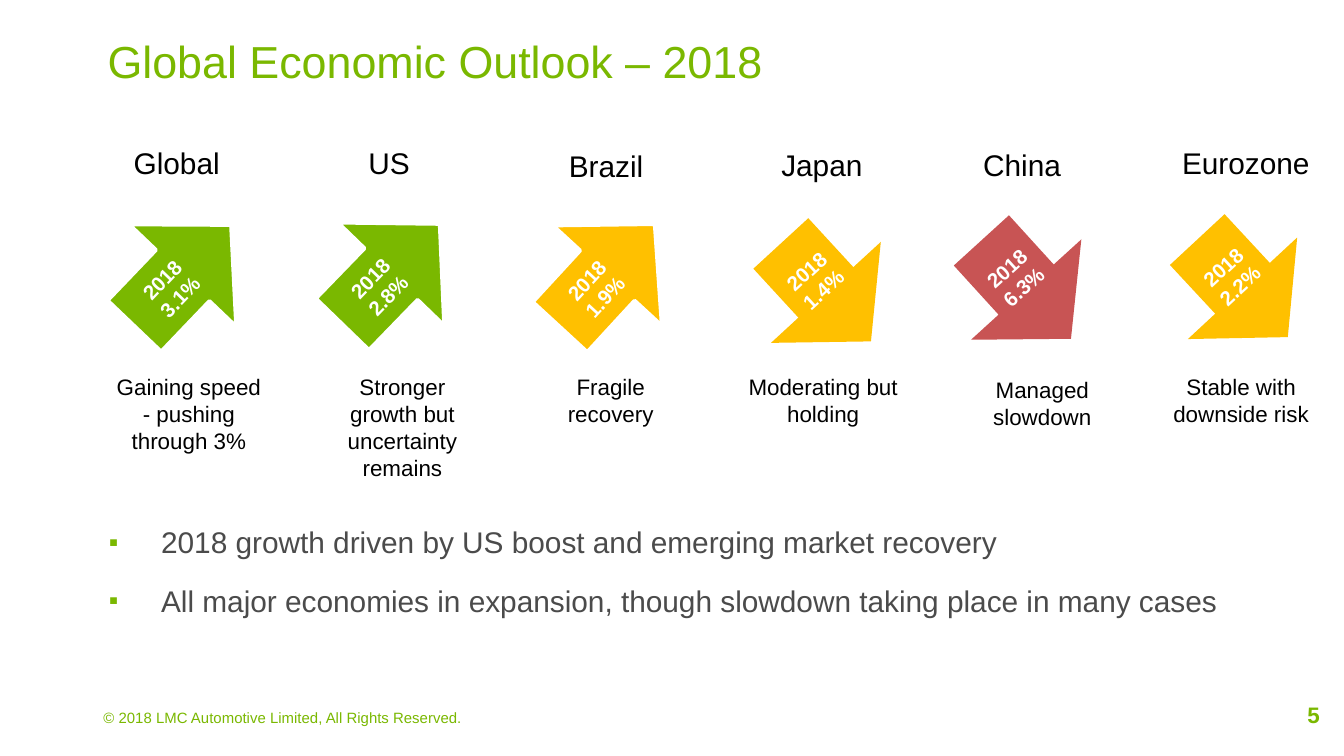
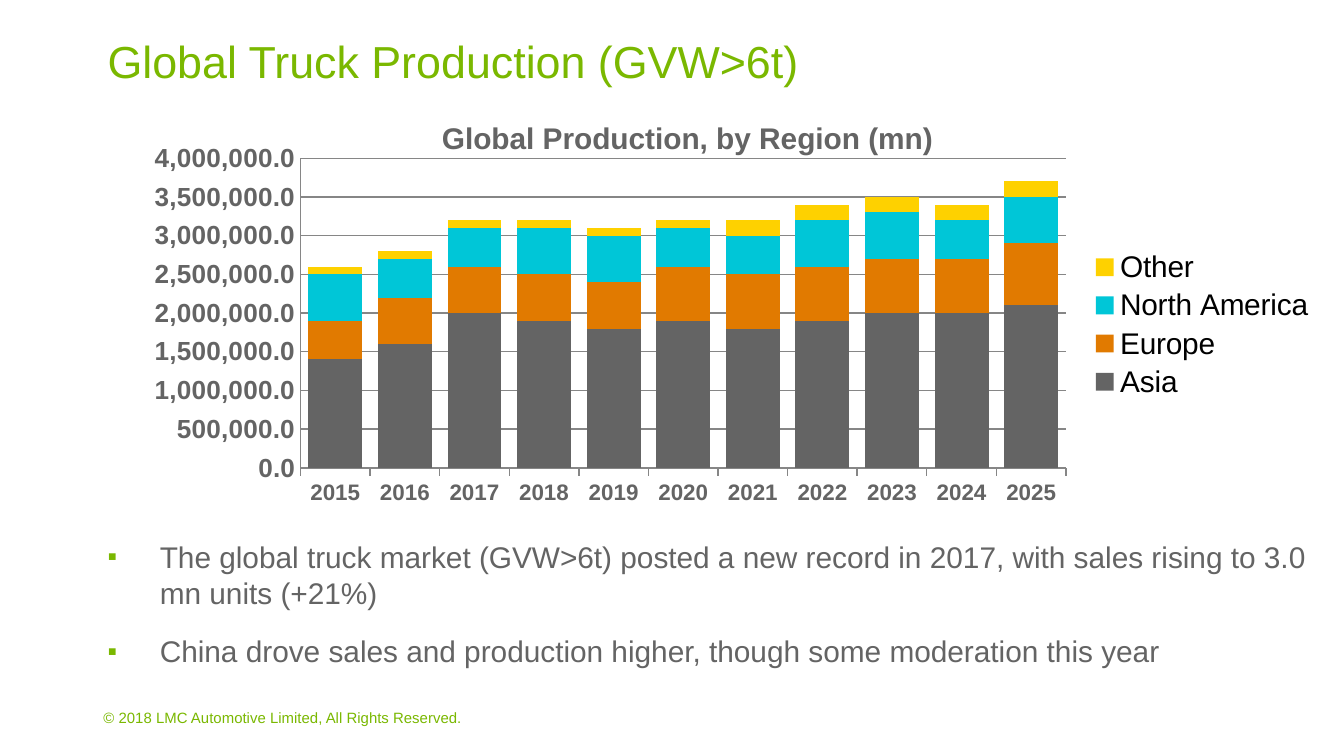
from dataclasses import dataclass
from typing import NamedTuple, Optional

import pptx
import pptx.chart.data
import pptx.dml.color
import pptx.enum.chart
import pptx.enum.shapes
import pptx.enum.text
import pptx.oxml
import pptx.oxml.ns
import pptx.util

Pt = pptx.util.Pt
Align = pptx.enum.text.PP_ALIGN
Anchor = pptx.enum.text.MSO_ANCHOR
AutoSize = pptx.enum.text.MSO_AUTO_SIZE


class Box(NamedTuple):
    left: float
    top: float
    width: float
    height: float

    def lengths(self) -> list:
        return [Pt(value) for value in self]


@dataclass(frozen=True)
class Theme:
    font: str = "Arial"
    green: str = "7AB800"
    amber: str = "FFC000"
    red: str = "C85454"
    white: str = "FFFFFF"
    black: str = "000000"
    grey: str = "646464"
    dark_grey: str = "4B4B4B"
    grid: str = "868686"
    orange: str = "E17A00"
    cyan: str = "00C6D7"
    yellow: str = "FED100"
    title_size: float = 24
    body_size: float = 16
    value_axis_size: float = 14
    small_size: float = 12
    arrow_size: float = 11
    footer_size: float = 8


THEME = Theme()


@dataclass(frozen=True)
class Region:
    name: str
    name_box: Box
    growth: str
    rising: bool
    color: str
    arrow_left: float
    arrow_top: float
    rotation: float
    comment: str
    comment_box: Box


@dataclass(frozen=True)
class Series:
    name: str
    color: str
    hundred_thousands: tuple


REGIONS = (
    Region("Global", Box(64.1, 74.2, 61.2, 26.6), "3.1%", True, THEME.green,
           58.3, 110.2, 43.7, "Gaining speed - pushing through 3%",
           Box(52.6, 196.6, 97.2, 51.1)),
    Region("US", Box(190.1, 74.2, 36.7, 26.6), "2.8%", True, THEME.green,
           169.9, 109.4, 44.1, "Stronger growth but uncertainty remains",
           Box(167, 196.6, 97.2, 65.5)),
    Region("Brazil", Box(297.4, 75.6, 54.7, 26.6), "1.9%", True, THEME.amber,
           285.8, 110.2, 42.6, "Fragile recovery",
           Box(278.6, 196.6, 97.2, 36)),
    Region("Japan", Box(411.1, 74.9, 58.3, 26.6), "1.4%", False, THEME.amber,
           402.5, 121, 317.4, "Moderating but holding",
           Box(392.4, 196.6, 97.2, 36)),
    Region("China", Box(519.1, 74.9, 56.9, 26.6), "6.3%", False, THEME.red,
           509.8, 119.5, 317.7, "Managed slowdown",
           Box(509.8, 198, 97.2, 36)),
    Region("Eurozone", Box(625.7, 74.2, 83.5, 26.6), "2.2%", False, THEME.amber,
           625.7, 118.8, 317.1, "Stable with downside risk",
           Box(616.3, 196.6, 97.2, 36)),
)

YEARS = [str(year) for year in range(2015, 2026)]
PRODUCTION = (
    Series("Asia", THEME.grey, (14, 16, 20, 19, 18, 19, 18, 19, 20, 20, 21)),
    Series("Europe", THEME.orange, (5, 6, 6, 6, 6, 7, 7, 7, 7, 7, 8)),
    Series("North America", THEME.cyan, (6, 5, 5, 6, 6, 5, 5, 6, 6, 5, 6)),
    Series("Other", THEME.yellow, (1, 1, 1, 1, 1, 1, 2, 2, 2, 2, 2)),
)


def rgb(color: str):
    return pptx.dml.color.RGBColor.from_string(color)


def format_font(font, size: float, color: str, bold: bool = False) -> None:
    font.name = THEME.font
    font.size = Pt(size)
    font.bold = bold
    font.color.rgb = rgb(color)


def clear_margins(frame) -> None:
    frame.margin_left = frame.margin_top = frame.margin_right = frame.margin_bottom = 0


def write_lines(frame, lines: tuple, size: float, color: str, bold: bool = False,
                align=Align.LEFT) -> None:
    for index, line in enumerate(lines):
        paragraph = frame.add_paragraph() if index else frame.paragraphs[0]
        paragraph.text = line
        paragraph.alignment = align
        format_font(paragraph.font, size, color, bold)


def add_text(slide, box: Box, text: str, size: float, color: str, bold: bool = False,
             align=Align.LEFT, wrap: bool = True, inset: bool = True,
             anchor=Anchor.TOP) -> None:
    frame = slide.shapes.add_textbox(*box.lengths()).text_frame
    frame.word_wrap = wrap
    frame.vertical_anchor = anchor
    if not inset:
        clear_margins(frame)
    write_lines(frame, (text,), size, color, bold, align)


def add_bullets(slide, box: Box, lines: tuple, color: str) -> None:
    frame = slide.shapes.add_textbox(*box.lengths()).text_frame
    frame.word_wrap = True
    clear_margins(frame)
    for index, line in enumerate(lines):
        paragraph = frame.add_paragraph() if index else frame.paragraphs[0]
        paragraph.text = line
        properties = paragraph._p.get_or_add_pPr()
        properties.set("marL", str(Pt(28)))
        properties.set("indent", str(-Pt(28)))
        namespace = pptx.oxml.ns.nsdecls("a")
        for element in (
            f'<a:buClr {namespace}><a:srgbClr val="{THEME.green}"/></a:buClr>',
            f'<a:buSzPct {namespace} val="90000"/>',
            f'<a:buFont {namespace} typeface="{THEME.font}"/>',
            f'<a:buChar {namespace} char="▪"/>',
        ):
            properties.append(pptx.oxml.parse_xml(element))
        if index:
            paragraph.space_before = Pt(12)
        format_font(paragraph.font, THEME.body_size, color)


def add_slide(presentation, title: str, number: Optional[str] = None):
    """Add a title-only slide with the shared title style and footer."""
    slide = presentation.slides.add_slide(presentation.slide_layouts[5])
    placeholder = slide.shapes.title
    placeholder.left, placeholder.top, placeholder.width, placeholder.height = (
        Box(57.6, 18, 648, 39.6).lengths())
    frame = placeholder.text_frame
    frame.auto_size = AutoSize.NONE
    frame.vertical_anchor = Anchor.TOP
    clear_margins(frame)
    write_lines(frame, (title,), THEME.title_size, THEME.green)
    add_text(slide, Box(55.4, 379.4, 378, 9.4),
             "© 2018 LMC Automotive Limited, All Rights Reserved.",
             THEME.footer_size, THEME.green, inset=False)
    if number:
        add_text(slide, Box(539.3, 372.2, 167.8, 21.6), number, THEME.small_size,
                 THEME.green, True, Align.RIGHT, inset=False, anchor=Anchor.MIDDLE)
    return slide


def add_growth_arrow(slide, region: Region) -> None:
    kinds = pptx.enum.shapes.MSO_SHAPE
    kind = kinds.UP_ARROW if region.rising else kinds.DOWN_ARROW
    width, height = (79.2, 74.9) if region.rising else (79.9, 71.3)
    box = Box(region.arrow_left, region.arrow_top, width, height)
    arrow = slide.shapes.add_shape(kind, *box.lengths())
    arrow.rotation = region.rotation
    arrow.shadow.inherit = False
    arrow.fill.solid()
    arrow.fill.fore_color.rgb = rgb(region.color)
    frame = arrow.text_frame
    frame.word_wrap = True
    frame.vertical_anchor = Anchor.MIDDLE
    if region.rising:
        arrow.line.color.rgb = rgb(THEME.white)
        arrow.line.width = Pt(2)
        frame._txBody.bodyPr.set("vert", "vert270")
    else:
        arrow.line.fill.background()
    write_lines(frame, ("2018", region.growth), THEME.arrow_size, THEME.white, True,
                Align.CENTER)


def place_plot(chart, box: Box) -> None:
    """Fix the inner plot area, in fractions of the chart's size."""
    area = chart._chartSpace.chart.plotArea
    for layout in area.findall(pptx.oxml.ns.qn("c:layout")):
        area.remove(layout)
    values = "".join(f'<c:{key} val="{value}"/>' for key, value in zip("xywh", box))
    area.insert(0, pptx.oxml.parse_xml(
        f'<c:layout {pptx.oxml.ns.nsdecls("c")}><c:manualLayout>'
        '<c:layoutTarget val="inner"/><c:xMode val="edge"/><c:yMode val="edge"/>'
        f'{values}</c:manualLayout></c:layout>'))


def add_production_chart(slide, box: Box) -> None:
    enums = pptx.enum.chart
    data = pptx.chart.data.CategoryChartData(number_format="#,##0.0")
    data.categories = YEARS
    for series in PRODUCTION:
        data.add_series(series.name, [value * 100000 for value in series.hundred_thousands])
    chart = slide.shapes.add_chart(
        enums.XL_CHART_TYPE.COLUMN_STACKED, *box.lengths(), data).chart
    chart.has_title = False
    format_font(chart.font, THEME.body_size, THEME.black)
    chart.has_legend = True
    chart.legend.position = enums.XL_LEGEND_POSITION.RIGHT
    chart.legend.include_in_layout = False
    format_font(chart.legend.font, THEME.body_size, THEME.black)

    plot = chart.plots[0]
    plot.gap_width = 29
    plot.overlap = 100
    plot.vary_by_categories = False
    for drawn, series in zip(plot.series, PRODUCTION):
        drawn.format.fill.solid()
        drawn.format.fill.fore_color.rgb = rgb(series.color)

    categories, values = chart.category_axis, chart.value_axis
    categories.major_tick_mark = enums.XL_TICK_MARK.OUTSIDE
    values.major_tick_mark = enums.XL_TICK_MARK.NONE
    values.minimum_scale, values.maximum_scale = 0, 4000000
    values.major_unit = 500000
    values.tick_labels.number_format = "#,##0.0"
    values.tick_labels.number_format_is_linked = False
    values.has_major_gridlines = True
    format_font(categories.tick_labels.font, THEME.small_size, THEME.grey, True)
    format_font(values.tick_labels.font, THEME.value_axis_size, THEME.grey, True)
    for owner in (categories, values, values.major_gridlines):
        owner.format.line.color.rgb = rgb(THEME.grid)
        owner.format.line.width = Pt(0.75)
    place_plot(chart, Box(0.14, 0.06, 0.64, 0.82))


def build_outlook(presentation) -> None:
    slide = add_slide(presentation, "Global Economic Outlook – 2018", "5")
    for region in REGIONS:
        add_text(slide, region.name_box, region.name, THEME.body_size, THEME.black,
                 align=Align.CENTER, wrap=False)
        add_growth_arrow(slide, region)
        add_text(slide, region.comment_box, region.comment, THEME.small_size,
                 THEME.black, align=Align.CENTER)
    add_bullets(slide, Box(58.3, 280.8, 601.2, 30.2), (
        "2018 growth driven by US boost and emerging market recovery",
        "All major economies in expansion, though slowdown taking place in many cases",
    ), THEME.dark_grey)


def build_production(presentation) -> None:
    slide = add_slide(presentation, "Global Truck Production (GVW>6t)")
    add_production_chart(slide, Box(71.3, 72.7, 640.8, 202.3))
    add_bullets(slide, Box(57.6, 288.7, 644.4, 105.1), (
        "The global truck market (GVW>6t) posted a new record in 2017, "
        "with sales rising to 3.0 mn units (+21%)",
        "China drove sales and production higher, though some moderation this year",
    ), THEME.grey)
    add_text(slide, Box(229.7, 60.5, 285.8, 26.6), "Global Production, by Region (mn)",
             THEME.body_size, THEME.grey, True)


def main() -> None:
    presentation = pptx.Presentation()
    presentation.slide_width, presentation.slide_height = Pt(720), Pt(405)
    build_outlook(presentation)
    build_production(presentation)
    presentation.save("out.pptx")


if __name__ == "__main__":
    main()
